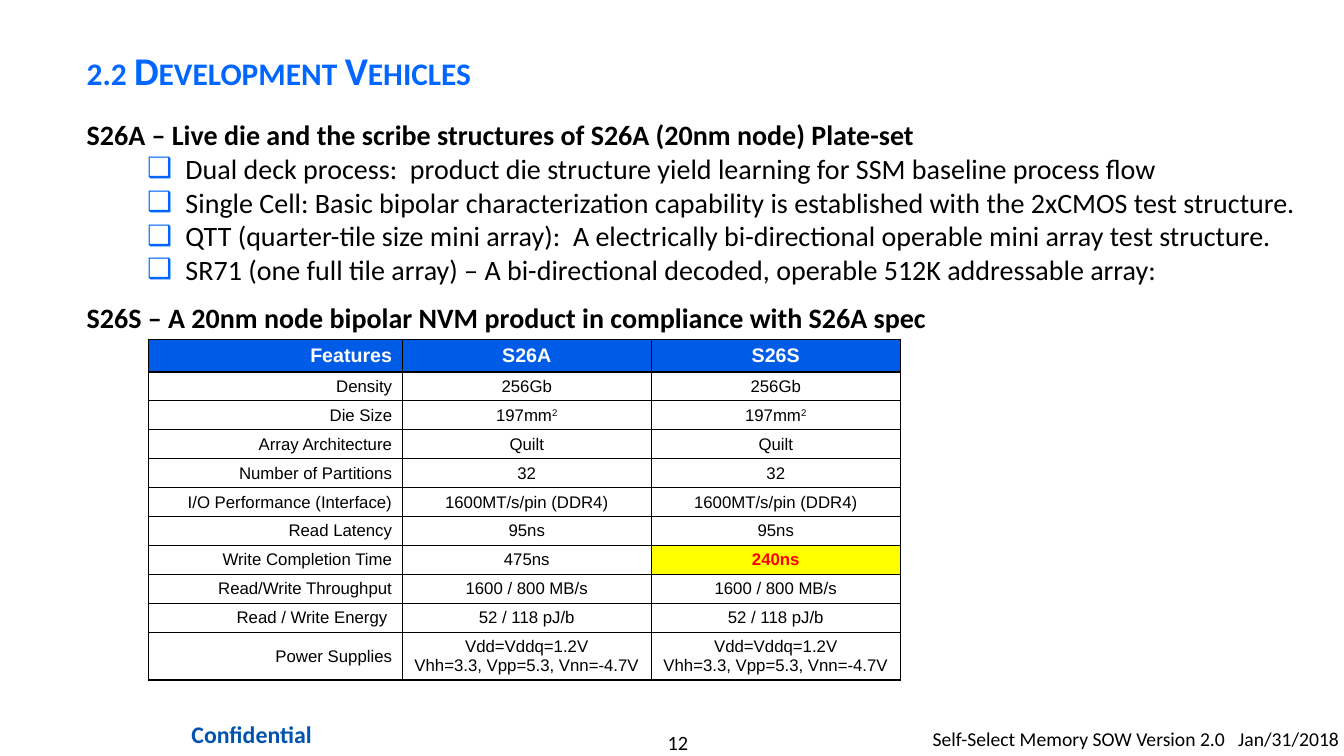
from lxml.etree import SubElement
from pptx import Presentation
from pptx.dml.color import RGBColor
from pptx.enum.text import MSO_ANCHOR, MSO_AUTO_SIZE, PP_ALIGN
from pptx.oxml.ns import qn
from pptx.util import Inches, Pt

BLACK = RGBColor(0x00, 0x00, 0x00)
WHITE = RGBColor(0xFF, 0xFF, 0xFF)
TITLE_BLUE = RGBColor(0x00, 0x66, 0xFF)
HEADER_BLUE = RGBColor(0x00, 0x5C, 0xE7)
CONFIDENTIAL_BLUE = RGBColor(0x00, 0x54, 0xB0)
YELLOW = RGBColor(0xFF, 0xFF, 0x00)
RED = RGBColor(0xFF, 0x00, 0x00)

TITLE = "2.2 Development Vehicles"
# Each line is (level, text)
BODY = [
    (0, "S26A – Live die and the scribe structures of S26A (20nm node) Plate-set"),
    (1, "Dual deck process:  product die structure yield learning for SSM baseline process flow"),
    (1, "Single Cell: Basic bipolar characterization capability is established with the 2xCMOS test structure."),
    (1, "QTT (quarter-tile size mini array):  A electrically bi-directional operable mini array test structure."),
    (1, "SR71 (one full tile array) – A bi-directional decoded, operable 512K addressable array:"),
    (0, "S26S – A 20nm node bipolar NVM product in compliance with S26A spec"),
]
# A caret marks the start of a superscript
POWER = "Vdd=Vddq=1.2V\nVhh=3.3, Vpp=5.3, Vnn=-4.7V"
FEATURES = [
    ("Features", "S26A", "S26S"),
    ("Density", "256Gb", "256Gb"),
    ("Die Size", "197mm^2", "197mm^2"),
    ("Array Architecture", "Quilt", "Quilt"),
    ("Number of Partitions", "32", "32"),
    ("I/O Performance (Interface)", "1600MT/s/pin (DDR4)", "1600MT/s/pin (DDR4)"),
    ("Read Latency", "95ns", "95ns"),
    ("Write Completion Time", "475ns", "240ns"),
    ("Read/Write Throughput", "1600 / 800 MB/s", "1600 / 800 MB/s"),
    ("Read / Write Energy ", "52 / 118 pJ/b", "52 / 118 pJ/b"),
    ("Power Supplies", POWER, POWER),
]
COLUMN_WIDTHS = (2.52, 2.47, 2.47)
ROW_HEIGHTS = [0.32] + [0.28] * 9 + [0.47]
HIGHLIGHT = (7, 2)


class SlideBuilder:
    """Holds the text style and the current slide."""

    text_font = "Calibri"
    table_font = "Arial"

    def __init__(self, presentation):
        self.slide = presentation.slides.add_slide(presentation.slide_layouts[1])

    def style(self, paragraph, size, color, bold=False, name=text_font):
        font = paragraph.font
        font.name, font.size, font.bold = name, Pt(size), bold
        font.color.rgb = color

    def place(self, shape, left, top, width, height):
        shape.left, shape.top = Inches(left), Inches(top)
        shape.width, shape.height = Inches(width), Inches(height)
        shape.text_frame.auto_size = MSO_AUTO_SIZE.NONE
        shape.text_frame.word_wrap = True

    def title(self, text, *box):
        shape = self.slide.shapes.title
        self.place(shape, *box)
        shape.text_frame.vertical_anchor = MSO_ANCHOR.MIDDLE
        paragraph = shape.text_frame.paragraphs[0]
        paragraph.text = text
        paragraph.alignment = PP_ALIGN.LEFT
        paragraph.line_spacing = 1.1
        self.style(paragraph, 28, TITLE_BLUE, True)
        paragraph.font._element.set("cap", "small")

    def bullet(self, paragraph, indented):
        properties = paragraph._p.get_or_add_pPr()
        properties.set("marL", str(Inches(0.98 if indented else 0)))
        properties.set("indent", str(Inches(-0.38 if indented else 0)))
        if not indented:
            SubElement(properties, qn("a:buNone"))
            return
        color = SubElement(properties, qn("a:buClr"))
        SubElement(color, qn("a:srgbClr"), val=str(TITLE_BLUE))
        SubElement(properties, qn("a:buChar"), char="❑")

    def body(self, lines, *box):
        shape = self.slide.placeholders[1]
        self.place(shape, *box)
        frame = shape.text_frame
        for index, (level, text) in enumerate(lines):
            paragraph = frame.add_paragraph() if index else frame.paragraphs[0]
            paragraph.text = text
            paragraph.level = level
            self.bullet(paragraph, level == 1)
            paragraph.space_before = Pt(10 if index and level == 0 else 0)
            self.style(paragraph, 20, BLACK, level == 0)

    def text(self, text, box, margins, size, color, alignment, bold=False):
        shape = self.slide.shapes.add_textbox(0, 0, 0, 0)
        self.place(shape, *box)
        frame = shape.text_frame
        frame.margin_left = frame.margin_right = Inches(margins[0])
        frame.margin_top = frame.margin_bottom = Inches(margins[1])
        paragraph = frame.paragraphs[0]
        paragraph.text = text
        paragraph.alignment = alignment
        self.style(paragraph, size, color, bold)

    def border(self, cell):
        properties = cell._tc.get_or_add_tcPr()
        for index, side in enumerate(("a:lnL", "a:lnR", "a:lnT", "a:lnB")):
            line = SubElement(properties, qn(side), w=str(Pt(1)))
            fill = SubElement(line, qn("a:solidFill"))
            SubElement(fill, qn("a:srgbClr"), val=str(BLACK))
            properties.insert(index, line)

    def cell(self, cell, text, fill, size, color, bold, alignment):
        cell.fill.solid()
        cell.fill.fore_color.rgb = fill
        cell.vertical_anchor = MSO_ANCHOR.MIDDLE
        self.border(cell)
        for index, line in enumerate(text.split("\n")):
            frame = cell.text_frame
            paragraph = frame.add_paragraph() if index else frame.paragraphs[0]
            paragraph.alignment = alignment
            self.style(paragraph, size, color, bold, self.table_font)
            for position, part in enumerate(line.split("^")):
                run = paragraph.add_run()
                run.text = part
                if position:
                    run.font._element.set("baseline", "30000")

    def table(self, rows, left, top):
        table = self.slide.shapes.add_table(
            len(rows), len(COLUMN_WIDTHS), Inches(left), Inches(top),
            Inches(sum(COLUMN_WIDTHS)), Inches(sum(ROW_HEIGHTS))).table
        table.horz_banding = False
        for column, width in zip(table.columns, COLUMN_WIDTHS):
            column.width = Inches(width)
        for row, height in zip(table.rows, ROW_HEIGHTS):
            row.height = Inches(height)
        for row_index, row in enumerate(rows):
            for column_index, text in enumerate(row):
                look = (WHITE, 12, BLACK, False)
                if row_index == 0:
                    look = (HEADER_BLUE, 14, WHITE, True)
                elif (row_index, column_index) == HIGHLIGHT:
                    look = (YELLOW, 12, RED, True)
                alignment = PP_ALIGN.CENTER if column_index else PP_ALIGN.RIGHT
                self.cell(table.cell(row_index, column_index), text, *look, alignment)


def main():
    presentation = Presentation()
    presentation.slide_width = Inches(13.33)
    presentation.slide_height = Inches(7.5)
    builder = SlideBuilder(presentation)

    # Footer
    builder.text("12", (5.56, 7.24, 2.33, 0.24), (0, 0), 14.5, BLACK, PP_ALIGN.CENTER)
    builder.text("Confidential", (1.55, 7.08, 1.89, 0.41), (0.12, 0.06), 17,
                 CONFIDENTIAL_BLUE, PP_ALIGN.CENTER, True)
    builder.text("Self-Select Memory SOW Version 2.0   Jan/31/2018",
                 (9.25, 7.16, 4.08, 0.34), (0, 0.05), 14, BLACK, PP_ALIGN.LEFT)

    # Title and list
    builder.title(TITLE, 0.76, 0.21, 11.06, 0.92)
    builder.body(BODY, 0.76, 1.12, 12.25, 5.78)

    # Feature comparison
    builder.table(FEATURES, 1.47, 3.37)

    presentation.save("out.pptx")


if __name__ == "__main__":
    main()
